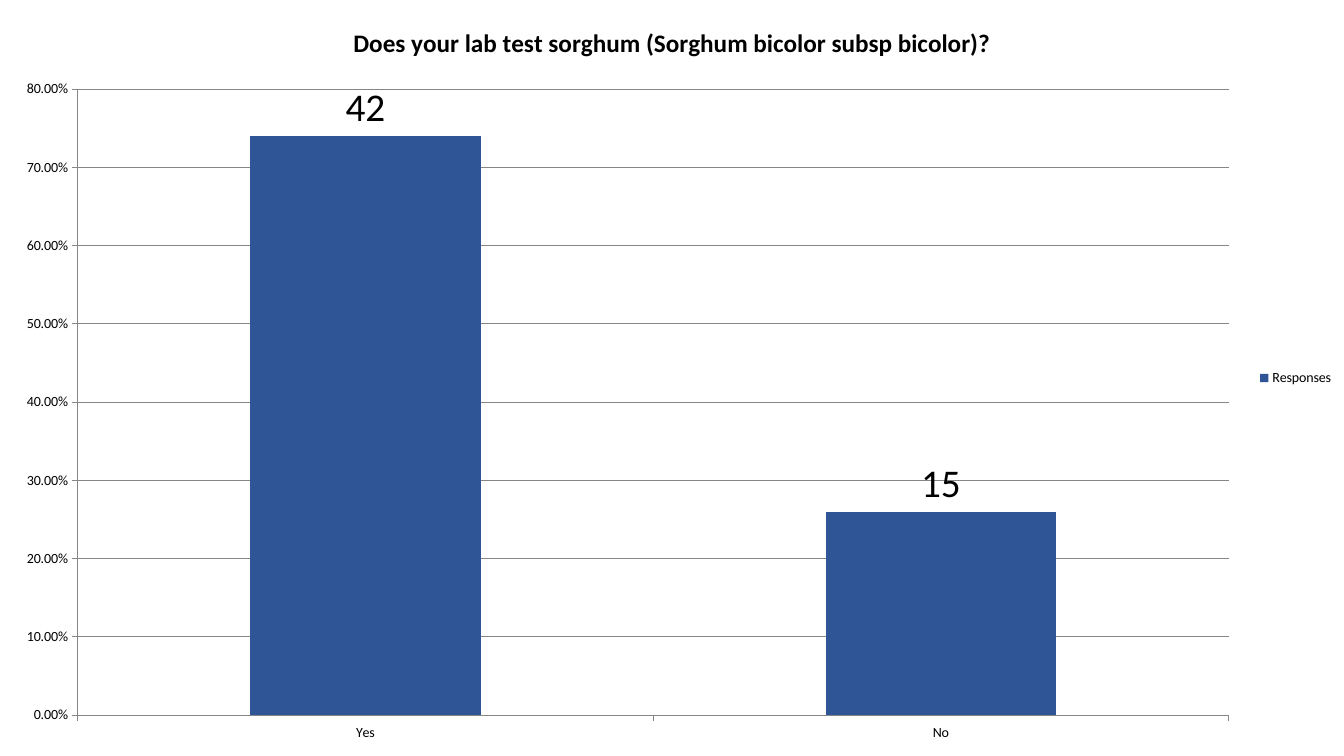
from dataclasses import dataclass

from pptx import Presentation
from pptx.chart.data import CategoryChartData
from pptx.dml.color import RGBColor
from pptx.enum.chart import XL_CHART_TYPE as ChartType
from pptx.enum.chart import XL_LABEL_POSITION as LabelPosition
from pptx.enum.chart import XL_LEGEND_POSITION as LegendPosition
from pptx.enum.chart import XL_TICK_MARK as TickMark
from pptx.util import Inches, Pt


@dataclass(frozen=True)
class Theme:
    font: str = "Calibri"
    text: RGBColor = RGBColor(0x00, 0x00, 0x00)
    bar: RGBColor = RGBColor(0x2F, 0x55, 0x97)
    line: RGBColor = RGBColor(0x86, 0x86, 0x86)
    body_size: Pt = Pt(10)
    title_size: Pt = Pt(18)
    label_size: Pt = Pt(28)


THEME = Theme()
QUESTION = "Does your lab test sorghum (Sorghum bicolor subsp bicolor)?"
SHARES = {"Yes": 0.74, "No": 0.26}
COUNTS = ["42", "15"]


def style_font(font, size, bold=False):
    font.name = THEME.font
    font.size = size
    font.bold = bold
    font.color.rgb = THEME.text


def style_line(line):
    line.color.rgb = THEME.line
    line.width = Pt(0.75)


def style_axes(chart):
    for axis in (chart.category_axis, chart.value_axis):
        axis.major_tick_mark = TickMark.OUTSIDE
        axis.minor_tick_mark = TickMark.NONE
        style_line(axis.format.line)
    chart.category_axis.has_major_gridlines = False
    value_axis = chart.value_axis
    value_axis.minimum_scale = 0
    value_axis.maximum_scale = 0.8
    value_axis.major_unit = 0.1
    value_axis.has_major_gridlines = True
    style_line(value_axis.major_gridlines.format.line)
    value_axis.tick_labels.number_format = "0.00%"
    value_axis.tick_labels.number_format_is_linked = False


def label_bars(series):
    for index, count in enumerate(COUNTS):
        label = series.points[index].data_label
        run = label.text_frame.paragraphs[0].add_run()
        run.text = count
        style_font(run.font, THEME.label_size)
        label.position = LabelPosition.OUTSIDE_END


def add_response_chart(slide, left, top, width, height):
    data = CategoryChartData(number_format="0.00%")
    data.categories = list(SHARES)
    data.add_series("Responses", list(SHARES.values()))
    chart = slide.shapes.add_chart(
        ChartType.COLUMN_CLUSTERED, left, top, width, height, data
    ).chart
    style_font(chart.font, THEME.body_size)

    chart.has_title = True
    title = chart.chart_title
    title.include_in_layout = False
    run = title.text_frame.paragraphs[0].add_run()
    run.text = QUESTION
    style_font(run.font, THEME.title_size, bold=True)

    chart.has_legend = True
    chart.legend.position = LegendPosition.RIGHT
    chart.legend.include_in_layout = False

    plot = chart.plots[0]
    plot.gap_width = 150
    plot.vary_by_categories = False
    series = plot.series[0]
    series.format.fill.solid()
    series.format.fill.fore_color.rgb = THEME.bar
    series.invert_if_negative = False
    label_bars(series)
    style_axes(chart)


def main():
    presentation = Presentation()
    presentation.slide_width = Inches(13.33)
    presentation.slide_height = Inches(7.5)
    slide = presentation.slides.add_slide(presentation.slide_layouts[6])
    add_response_chart(slide, 0, 0, presentation.slide_width, presentation.slide_height)
    presentation.save("out.pptx")


if __name__ == "__main__":
    main()
